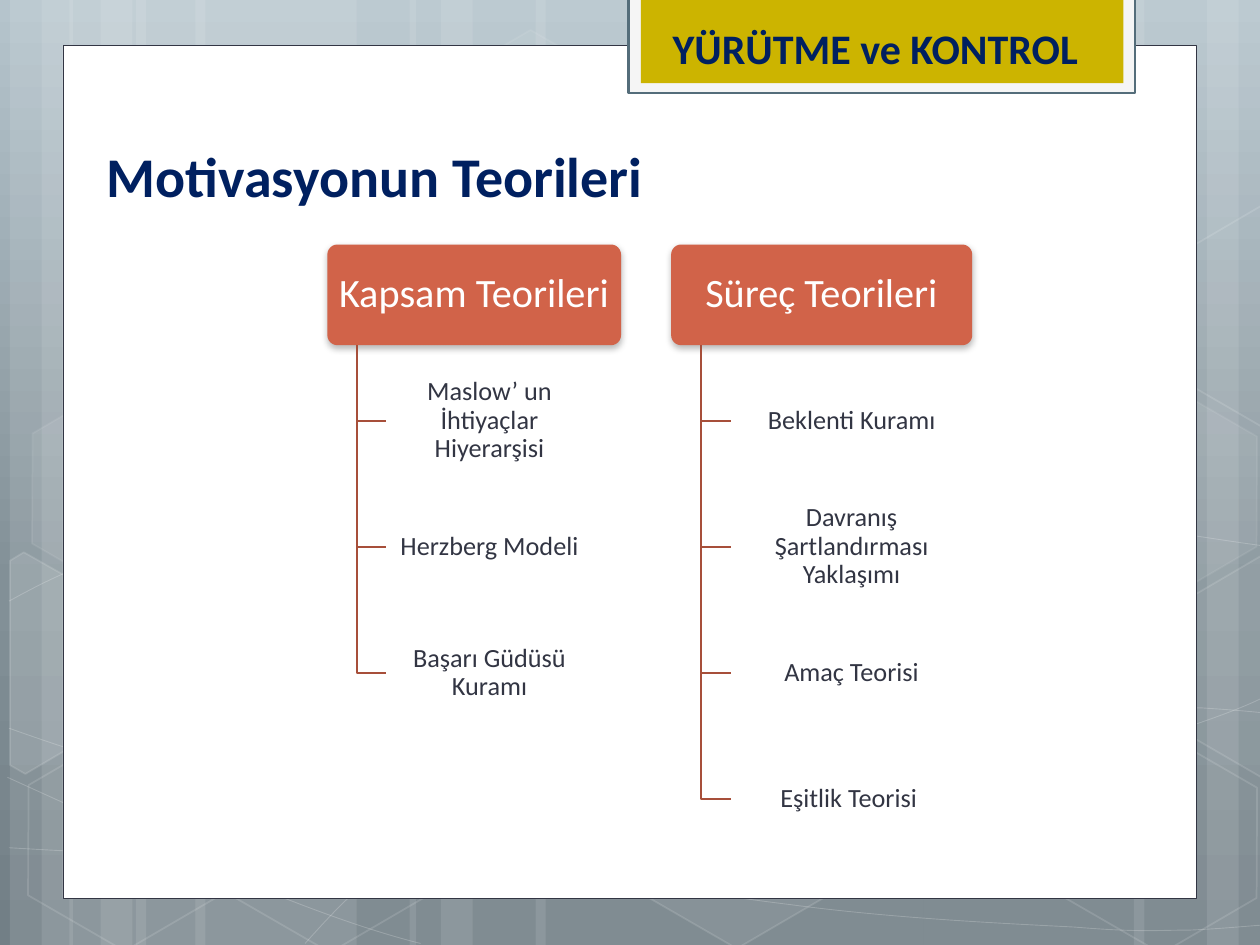
from copy import deepcopy
from math import cos, radians, sin

from lxml import etree
from pptx import Presentation
from pptx.dml.color import RGBColor
from pptx.enum.shapes import MSO_SHAPE
from pptx.enum.text import MSO_ANCHOR, PP_ALIGN
from pptx.oxml.ns import qn
from pptx.util import Cm, Pt

RECTANGLE = MSO_SHAPE.RECTANGLE
ROUNDED = MSO_SHAPE.ROUNDED_RECTANGLE
HEXAGON = MSO_SHAPE.HEXAGON
LEFT, CENTER = PP_ALIGN.LEFT, PP_ALIGN.CENTER
TOP, MIDDLE = MSO_ANCHOR.TOP, MSO_ANCHOR.MIDDLE

WIDTH, HEIGHT = 25.4, 19.05
WHITE, NAVY, INK = "FFFFFF", "002060", "323543"
GRADIENT = [(0, "B5C4CC"), (0.62, "829097"), (1, "727F86")]
TILT = 30

# left, width
STRIPS = [
    (2.74, 4.45), (0.2, 1.27), (0.84, 2.11), (3.94, 4.45), (1.4, 1.27), (2.03, 2.11),
    (18.62, 4.45), (24.33, 1.27), (22.86, 2.11), (10.8, 7.82), (8.26, 1.27), (8.89, 2.11),
]
# Start point, then two control points and an end point for each Bezier piece
WAVES = [
    [(0.18, 17.09), (1.55, 17.17), (2.92, 17.25), (4.83, 17.22), (6.73, 17.2),
     (9.09, 17.15), (11.63, 16.89), (14.17, 16.64), (17.78, 16.15), (20.12, 15.67),
     (22.43, 15.19), (24.82, 14.43), (25.58, 14)],
    [(0.18, 12.12), (0.91, 11.72), (1.65, 11.33), (3.07, 10.95), (4.52, 10.57),
     (6.58, 10.01), (8.81, 9.83), (11.07, 9.65), (13.82, 9.63), (16.61, 9.83),
     (19.41, 10.03), (24.05, 10.82), (25.58, 11.02)],
    [(0.15, 15.67), (3.23, 17.07), (6.27, 18.47), (8.48, 19.02)],
    [(0.18, 14.68), (0.97, 14.96), (1.78, 15.24), (3.25, 15.65), (4.72, 16.03),
     (6.93, 16.66), (9.07, 17.09), (11.18, 17.53), (13.84, 17.98), (15.95, 18.24),
     (18.06, 18.52), (20.32, 18.62), (21.67, 18.69), (22.99, 18.8), (23.34, 18.75),
     (24, 18.75), (24.66, 18.72), (25.12, 18.67), (25.58, 18.64)],
    [(6.15, 19.02), (6.6, 18.52), (7.06, 18.01), (7.67, 17.55), (8.28, 17.09),
     (9.14, 16.59), (9.86, 16.23), (10.57, 15.88), (11, 15.72), (11.94, 15.47),
     (12.85, 15.21), (14.55, 14.86), (15.44, 14.68), (16.36, 14.5), (16.48, 14.5),
     (17.27, 14.45), (18.06, 14.38), (19.3, 14.3), (20.17, 14.27), (21.06, 14.25),
     (22.5, 14.27), (24.21, 14.27), (24.66, 14.3), (25.1, 14.33), (25.55, 14.38)],
]
# left, top, fill opacity, line opacity
HEXAGONS = [
    (8.48, 0.91, 4, 8), (12.62, 14.96, 6, 12), (0.28, 15.01, 0, 12), (0.36, 7.92, 7, 8),
    (4.42, 15.04, 0, 12), (19.13, 11.51, 10, 12), (21.18, 15.06, 0, 12), (21.18, 7.98, 7, 8),
]
# fill opacity, pivot, corners
CUT_HEXAGONS = [
    (10, (0.91, 13.59), [(0.2, 11.3), (0.48, 11.13), (2.44, 12.24), (2.41, 14.48),
                         (0.51, 15.6), (0.2, 15.42)]),
    (4, (25.02, 13.21), [(23.52, 12.32), (25.43, 11.2), (25.63, 11.33), (25.63, 15.57),
                         (25.45, 15.67), (23.52, 14.55)]),
    (0, (25.02, 6.12), [(23.52, 5.26), (25.43, 4.14), (25.65, 4.27), (25.63, 8.51),
                        (25.45, 8.61), (23.52, 7.49)]),
]
# heading, left, heading width, card width, cards
BRANCHES = [
    ("Kapsam Teorileri", 6.6, 5.92, 4.17,
     ["Maslow’ un İhtiyaçlar Hiyerarşisi", "Herzberg Modeli", "Başarı Güdüsü Kuramı"]),
    ("Süreç Teorileri", 13.53, 6.07, 4.85,
     ["Beklenti Kuramı", "Davranış Şartlandırması Yaklaşımı", "Amaç Teorisi",
      "Eşitlik Teorisi "]),
]
HEADING_TOP, BOX_HEIGHT, PITCH = 4.93, 2.03, 2.54


def color(hex_string):
    return RGBColor.from_string(hex_string)


def set_opacity(fill_parent, percent):
    tone = fill_parent.find(qn("a:solidFill")).find(qn("a:srgbClr"))
    etree.SubElement(tone, qn("a:alpha"), val=str(percent * 1000))


def style(shape, fill=None, fill_opacity=100, line=None, line_width=1, line_opacity=100):
    shape.shadow.inherit = False
    properties = shape.element.spPr
    if fill and fill_opacity:
        shape.fill.solid()
        shape.fill.fore_color.rgb = color(fill)
        if fill_opacity < 100:
            set_opacity(properties, fill_opacity)
    else:
        shape.fill.background()
    if line:
        shape.line.color.rgb = color(line)
        shape.line.width = Pt(line_width)
        if line_opacity < 100:
            set_opacity(properties.find(qn("a:ln")), line_opacity)
    else:
        shape.line.fill.background()


def add_box(slide, kind, left, top, width, height, **look):
    box = slide.shapes.add_shape(kind, Cm(left), Cm(top), Cm(width), Cm(height))
    style(box, **look)
    return box


def add_outline(slide, points, close=False, **look):
    corners = [(Cm(x), Cm(y)) for x, y in points]
    builder = slide.shapes.build_freeform(*corners[0])
    builder.add_line_segments(corners[1:], close=close)
    outline = builder.convert_to_shape()
    style(outline, **look)
    return outline


def add_curve(slide, knots, **look):
    """Draw a chain of cubic Bezier pieces, three points to a piece."""
    curve = add_outline(slide, knots, **look)
    segments = list(curve.element.iter(qn("a:lnTo")))
    for first in range(0, len(segments), 3):
        piece = segments[first:first + 3]
        bezier = etree.Element(qn("a:cubicBezTo"))
        piece[0].addprevious(bezier)
        for segment in piece:
            bezier.append(segment[0])
            segment.getparent().remove(segment)


def turn(point, pivot, degrees):
    x, y = point[0] - pivot[0], point[1] - pivot[1]
    c, s = cos(radians(degrees)), sin(radians(degrees))
    return pivot[0] + c * x - s * y, pivot[1] + s * x + c * y


def write(shape, text, size, tone, bold=False, align=LEFT, anchor=TOP,
          inset=(0.25, 0.13), spacing=1.0):
    frame = shape.text_frame
    frame.word_wrap = True
    frame.vertical_anchor = anchor
    frame.margin_left = frame.margin_right = Cm(inset[0])
    frame.margin_top = frame.margin_bottom = Cm(inset[1])
    para = frame.paragraphs[0]
    para.alignment = align
    para.line_spacing = spacing
    span = para.add_run()
    span.text = text
    span.font.name = "Calibri"
    span.font.size = Pt(size)
    span.font.bold = bold
    span.font.color.rgb = color(tone)


def add_title(slide, left, top, width, height, text, size):
    box = slide.shapes.add_textbox(Cm(left), Cm(top), Cm(width), Cm(height))
    write(box, text, size, NAVY, bold=True)


def add_soft_shadow(shape):
    effects = shape.element.spPr.find(qn("a:effectLst"))
    shadow = etree.SubElement(effects, qn("a:outerShdw"), blurRad=str(Pt(4)),
                              dist=str(Pt(2)), dir="5400000", rotWithShape="0")
    tone = etree.SubElement(shadow, qn("a:srgbClr"), val="000000")
    etree.SubElement(tone, qn("a:alpha"), val="28000")


def set_background(slide):
    fill = slide.background.fill
    fill.gradient()
    fill.gradient_angle = 270
    stop_list = next(slide.element.iter(qn("a:gsLst")))
    stop_list.append(deepcopy(stop_list[-1]))
    for stop, (position, tone) in zip(fill.gradient_stops, GRADIENT):
        stop.position = position
        stop.color.rgb = color(tone)


def add_backdrop(slide):
    for left, width in STRIPS:
        add_box(slide, RECTANGLE, left, 0, width, HEIGHT, fill=WHITE, fill_opacity=10)
    for knots in WAVES:
        add_curve(slide, knots, line=WHITE, line_width=0.5, line_opacity=20)
    for left, top, fill_opacity, line_opacity in HEXAGONS:
        hexagon = add_box(slide, HEXAGON, left, top, 4.45, 3.86, fill=WHITE,
                          fill_opacity=fill_opacity, line=WHITE, line_opacity=line_opacity)
        hexagon.adjustments[0] = 0.285
        hexagon.rotation = TILT
    for fill_opacity, pivot, corners in CUT_HEXAGONS:
        level = [turn(corner, pivot, -TILT) for corner in corners]
        piece = add_outline(slide, level, close=True, fill=WHITE, fill_opacity=fill_opacity,
                            line=WHITE, line_opacity=12)
        piece.rotation = TILT


def add_branch(slide, heading, left, width, card_width, cards):
    box = add_box(slide, ROUNDED, left, HEADING_TOP, width, BOX_HEIGHT, fill="D16349")
    box.adjustments[0] = 0.1
    add_soft_shadow(box)
    write(box, heading, 23, WHITE, align=CENTER, anchor=MIDDLE, inset=(0.1, 0.1), spacing=0.9)
    stem, card_left = left + width / 10, left + width / 5
    for row, text in enumerate(cards, start=1):
        top = HEADING_TOP + row * PITCH
        middle = top + BOX_HEIGHT / 2
        add_outline(slide, [(stem, HEADING_TOP + BOX_HEIGHT), (stem, middle),
                            (card_left, middle)], line="A74F3A", line_width=1.25)
        card = add_box(slide, ROUNDED, card_left, top, card_width, BOX_HEIGHT,
                       fill=WHITE, fill_opacity=90)
        card.adjustments[0] = 0.1
        write(card, text, 15, INK, align=CENTER, anchor=MIDDLE, inset=(0.08, 0.05), spacing=0.9)


def main():
    deck = Presentation()
    deck.slide_width, deck.slide_height = Cm(WIDTH), Cm(HEIGHT)
    slide = deck.slides.add_slide(deck.slide_layouts[6])
    set_background(slide)
    add_backdrop(slide)
    add_box(slide, RECTANGLE, 1.27, 0.91, 22.86, 17.2, fill=WHITE, line=INK, line_width=0.5)
    add_box(slide, RECTANGLE, 12.67, -0.05, 10.21, 1.93, fill="F5F5F5", line="546D7A",
            line_width=1.25)
    add_box(slide, RECTANGLE, 12.92, -0.05, 9.73, 1.73, fill="CCB400")
    add_title(slide, 13.31, 0.33, 10.59, 1.27, "YÜRÜTME ve KONTROL", 24)
    add_title(slide, 1.9, 2.72, 19.41, 1.63, "Motivasyonun Teorileri", 32)
    for branch in BRANCHES:
        add_branch(slide, *branch)
    deck.save("out.pptx")


if __name__ == "__main__":
    main()
